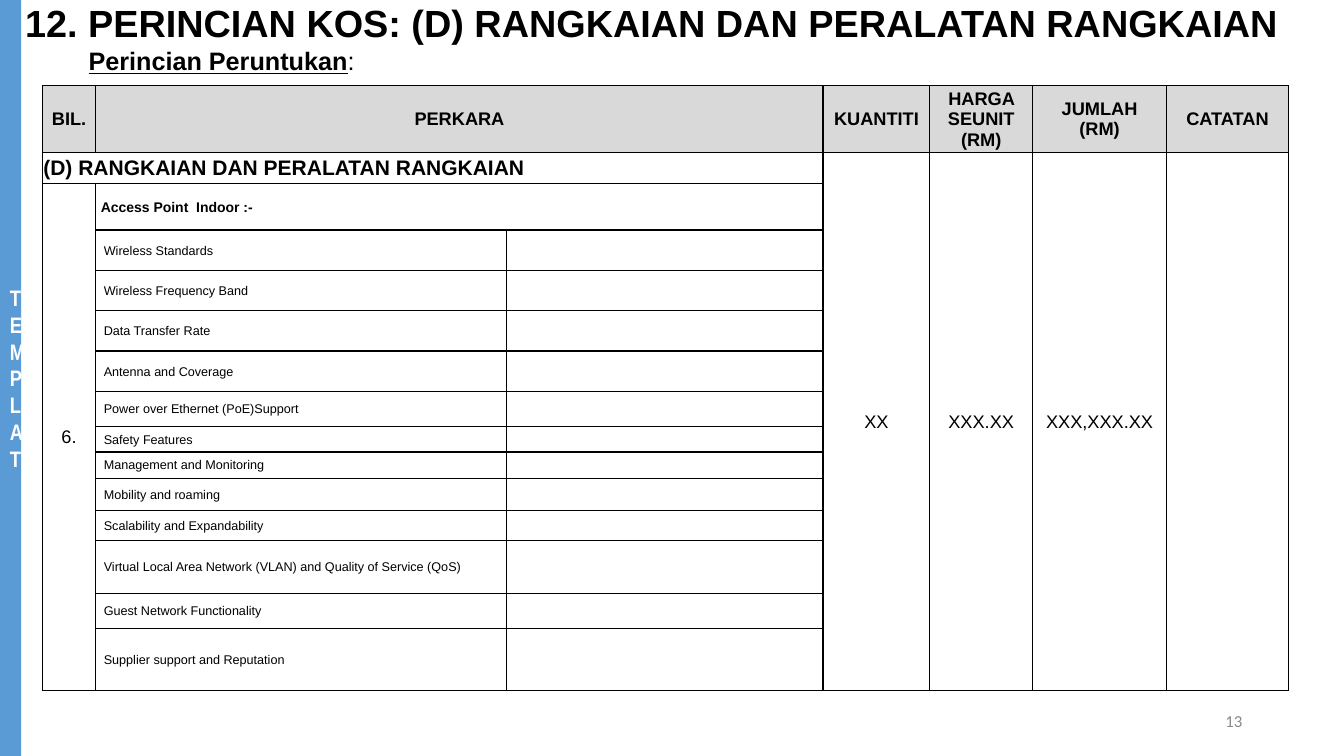
from lxml.etree import SubElement
from pptx import Presentation
from pptx.dml.color import RGBColor
from pptx.enum.shapes import MSO_SHAPE
from pptx.enum.text import MSO_ANCHOR as ANCHOR, PP_ALIGN as ALIGN
from pptx.oxml import parse_xml
from pptx.oxml.ns import nsdecls, qn
from pptx.util import Inches, Pt

W, H = Inches(13.33), Inches(7.5)
COLS = [0.53, 4.08, 3.14, 1.06, 1.02, 1.33, 1.21]
ROWS = [0.65, 0.31, 0.46, 0.4, 0.4, 0.4, 0.4, 0.35,
        0.25, 0.26, 0.32, 0.3, 0.52, 0.35, 0.61]
HEADERS = ["BIL.", "PERKARA", "", "KUANTITI", "HARGA SEUNIT\n(RM)",
           "JUMLAH\n(RM)", "CATATAN"]
SPECS = ["Wireless Standards", "Wireless Frequency Band", "Data Transfer Rate",
         "Antenna and Coverage", "Power over Ethernet (PoE)Support",
         "Safety Features", "Management and Monitoring", "Mobility and roaming",
         "Scalability and Expandability",
         "Virtual Local Area Network (VLAN) and Quality of Service (QoS)",
         "Guest Network Functionality", "Supplier support and Reputation"]
VALUES = ["XX", "XXX.XX", "XXX,XXX.XX", ""]


def rgb(value):
    return RGBColor.from_string(value)


def area(x, y, w, h):
    return [round(share * side / 100)
            for share, side in zip((x, y, w, h), (W, H, W, H))]


def write(tf, text, size, bold=False, align=ALIGN.LEFT, font="Arial", color="000000"):
    tf.word_wrap = True
    tf.text = text
    for p in tf.paragraphs:
        p.alignment = align
        for r in p.runs:
            r.font.name, r.font.size, r.font.bold = font, Pt(size), bold
            r.font.color.rgb = rgb(color)


def add_sidebar(slide, box):
    sp = slide.shapes.add_shape(MSO_SHAPE.RECTANGLE, *box)
    sp.shadow.inherit = False
    sp.fill.solid()
    sp.fill.fore_color.rgb = rgb("5B9BD5")
    sp.line.fill.background()
    tf = sp.text_frame
    tf.vertical_anchor = ANCHOR.MIDDLE
    write(tf, "TEMPLAT", 16, True, ALIGN.CENTER, "Arial Narrow", "FFFFFF")


def add_text(slide, box, text, size, anchor=ANCHOR.TOP, **style):
    tf = slide.shapes.add_textbox(*box).text_frame
    tf.vertical_anchor = anchor
    write(tf, text, size, **style)
    return tf.paragraphs[0]


def add_subtitle(slide, box):
    p = add_text(slide, box, "Perincian Peruntukan", 18, bold=True, align=ALIGN.JUSTIFY)
    p.runs[0].font.underline = True
    r = p.add_run()
    r.text = ":"
    r.font.name, r.font.size = "Arial", Pt(18)
    r.font.color.rgb = rgb("000000")


def prepare_cell(cell, fill):
    cell.fill.solid()
    cell.fill.fore_color.rgb = rgb(fill)
    cell.vertical_anchor = ANCHOR.MIDDLE
    cell.margin_left = cell.margin_right = cell.margin_top = Inches(0.01)
    cell.margin_bottom = 0
    tc_pr = cell._tc.get_or_add_tcPr()
    for i, side in enumerate(("lnL", "lnR", "lnT", "lnB")):
        tc_pr.insert(i, parse_xml(
            f'<a:{side} {nsdecls("a")} w="12700"><a:solidFill>'
            f'<a:srgbClr val="000000"/></a:solidFill></a:{side}>'))
    SubElement(cell.text_frame.paragraphs[0]._p, qn("a:endParaRPr"), sz="900")


def add_cost_table(slide, box):
    table = slide.shapes.add_table(len(ROWS), len(COLS), *box).table
    for col, share in zip(table.columns, COLS):
        col.width = round(box[2] * share / sum(COLS))
    for row, share in zip(table.rows, ROWS):
        row.height = round(box[3] * share / sum(ROWS))
    for i in range(len(ROWS)):
        for j in range(len(COLS)):
            prepare_cell(table.cell(i, j), "FFFFFF" if i else "D9D9D9")

    last = len(ROWS) - 1
    merges = [((0, 1), (0, 2)), ((1, 0), (1, 2)), ((2, 0), (last, 0)), ((2, 1), (2, 2))]
    merges += [((1, j), (last, j)) for j in range(3, len(COLS))]
    for start, end in merges:
        table.cell(*start).merge(table.cell(*end))

    def put(i, j, text, size, bold=False, align=ALIGN.CENTER, left=0.01):
        if text:
            cell = table.cell(i, j)
            cell.margin_left = Inches(left)
            write(cell.text_frame, text, size, bold, align)

    for j, header in enumerate(HEADERS):
        put(0, j, header, 13, True)
    put(1, 0, "(D) RANGKAIAN DAN PERALATAN RANGKAIAN", 15, True, ALIGN.LEFT)
    for j, value in enumerate(VALUES, 3):
        put(1, j, value, 13)
    put(2, 0, "6.", 13)
    put(2, 1, "Access Point  Indoor :-", 10, True, ALIGN.LEFT, 0.05)
    for i, spec in enumerate(SPECS, 3):
        put(i, 1, spec, 9, align=ALIGN.LEFT, left=0.08)


def main():
    prs = Presentation()
    prs.slide_width, prs.slide_height = W, H
    slide = prs.slides.add_slide(prs.slide_layouts[6])
    add_sidebar(slide, area(0, 0, 1.58, 100))
    add_text(slide, area(70.67, 92.67, 22.5, 5.33), "13", 12, ANCHOR.MIDDLE,
             align=ALIGN.RIGHT, font="Calibri", color="888888")
    add_text(slide, area(1.13, -0.67, 101.1, 10.67),
             "12. PERINCIAN KOS: (D) RANGKAIAN DAN PERALATAN RANGKAIAN", 27, bold=True)
    add_subtitle(slide, area(5.85, 5.33, 62.6, 5.33))
    add_cost_table(slide, area(3.15, 11.33, 92.72, 79.87))
    prs.save("out.pptx")


if __name__ == "__main__":
    main()
